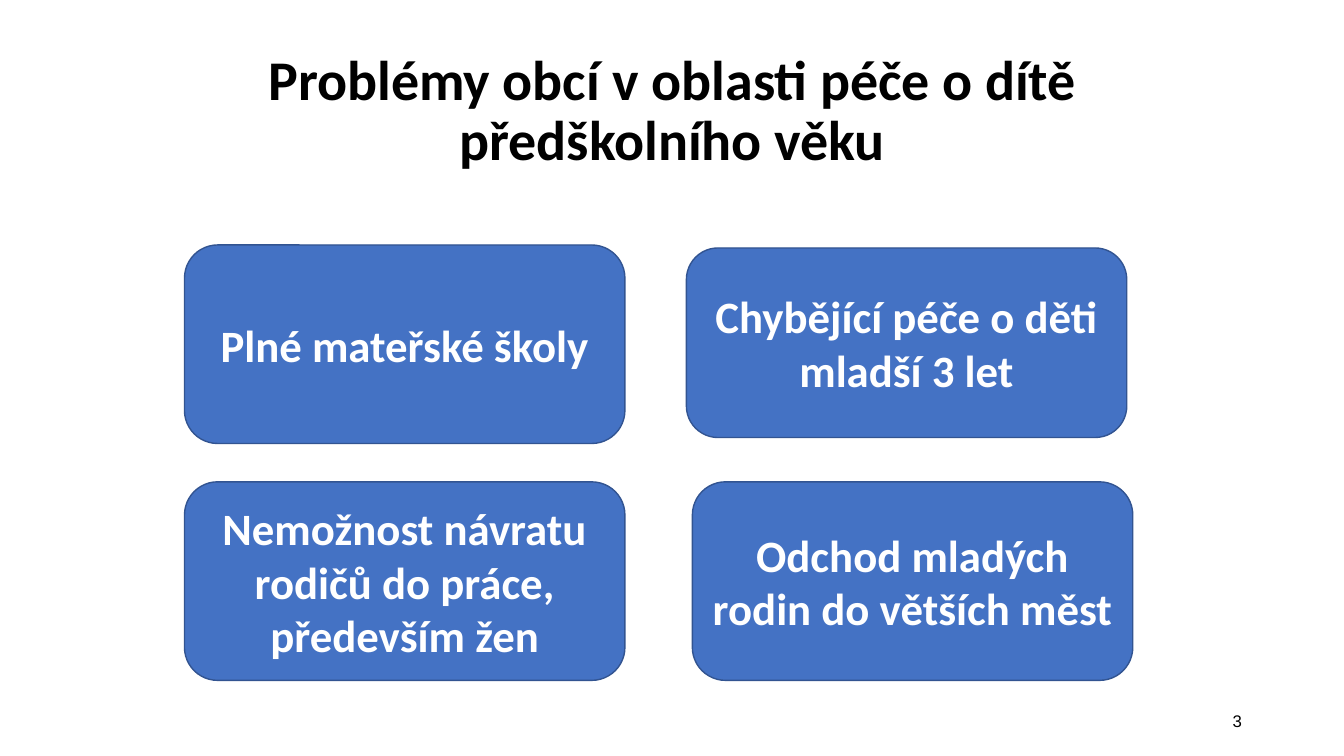
from pptx import Presentation
from pptx.dml.color import RGBColor
from pptx.enum import shapes, text
from pptx.util import Pt


def rgb(value):
    return RGBColor.from_string(value)


def write(shape, words, size, color, align=text.PP_ALIGN.CENTER,
          font="Calibri", bold=True, spacing=1.0):
    frame = shape.text_frame
    frame.word_wrap = True
    frame.vertical_anchor = text.MSO_ANCHOR.MIDDLE
    paragraph = frame.paragraphs[0]
    paragraph.alignment = align
    paragraph.line_spacing = spacing
    run = paragraph.add_run()
    run.text = words
    run.font.name = font
    run.font.size = Pt(size)
    run.font.bold = bold
    run.font.color.rgb = rgb(color)


deck = Presentation()
deck.slide_width, deck.slide_height = Pt(960), Pt(540)
slide = deck.slides.add_slide(deck.slide_layouts[6])

heading = slide.shapes.add_textbox(Pt(174.2), Pt(20.9), Pt(612), Pt(118.8))
write(heading, "Problémy obcí v oblasti péče o dítě předškolního věku",
      size=40, color="000000", spacing=0.9)

page_number = slide.shapes.add_textbox(Pt(678.2), Pt(500.4), Pt(216), Pt(28.8))
write(page_number, "3", size=12, color="000000", font="Arial", bold=False,
      align=text.PP_ALIGN.RIGHT)

# Left, top and height of each problem; all share one width
problems = [
    ("Nemožnost návratu rodičů do práce, především žen", 131.8, 344.2, 141.8),
    ("Plné mateřské školy", 131.8, 175, 141.8),
    ("Chybějící péče o děti mladší 3 let", 490.3, 177.1, 135.4),
    ("Odchod mladých rodin do větších měst", 494.6, 344.2, 141.8),
]
for problem, left, top, height in problems:
    card = slide.shapes.add_shape(shapes.MSO_SHAPE.ROUNDED_RECTANGLE,
                                  Pt(left), Pt(top), Pt(314.6), Pt(height))
    card.shadow.inherit = False
    card.fill.solid()
    card.fill.fore_color.rgb = rgb("4472C4")
    card.line.color.rgb = rgb("325491")
    card.line.width = Pt(1)
    write(card, problem, size=32, color="FFFFFF")

deck.save("out.pptx")
